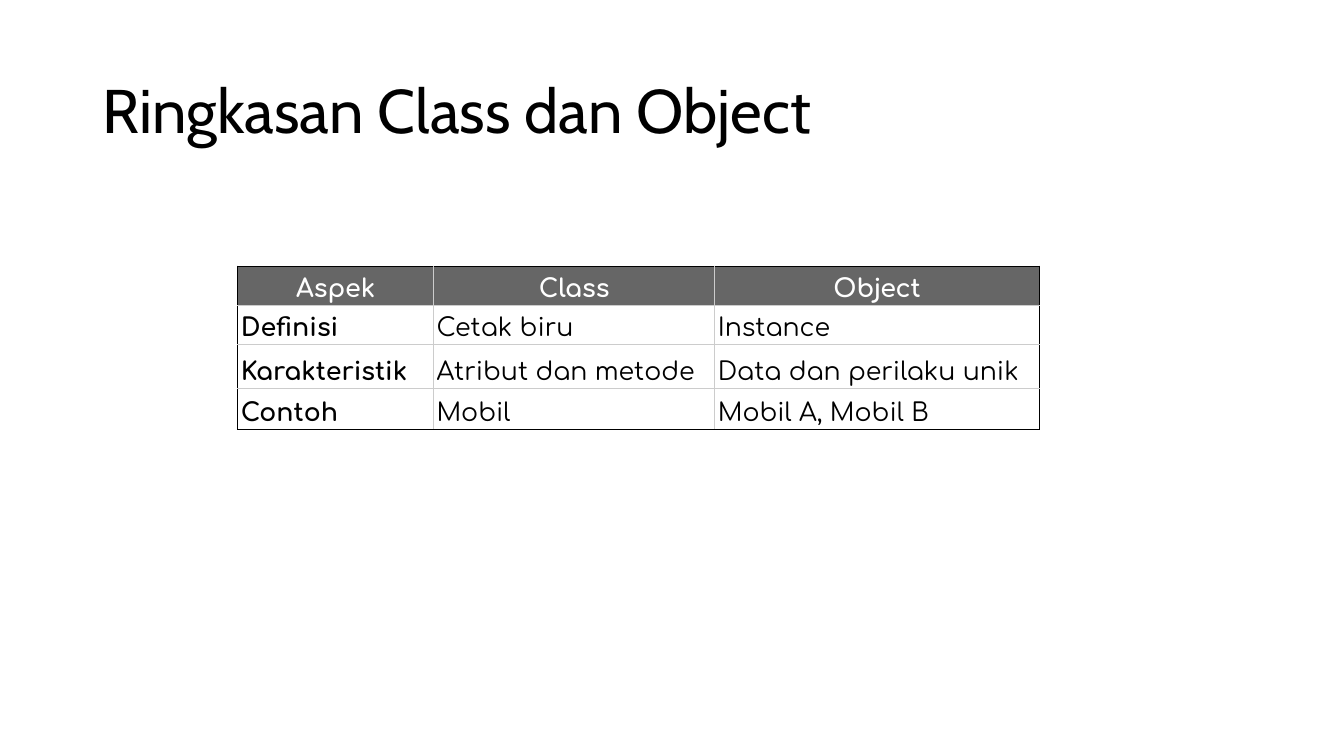
from lxml import etree
from pptx import Presentation
from pptx.dml.color import RGBColor
from pptx.enum.text import MSO_ANCHOR, PP_ALIGN
from pptx.oxml.ns import qn
from pptx.util import Pt

PX = 9144  # 100 px to the inch
MIDDLE, BOTTOM = MSO_ANCHOR.MIDDLE, MSO_ANCHOR.BOTTOM
LEFT, CENTER = PP_ALIGN.LEFT, PP_ALIGN.CENTER

BLACK, WHITE, DARK, PALE = "000000", "FFFFFF", "666666", "CCCCCC"
COLS = [194, 279, 322]
ROWS = [39, 39, 43, 41]
CELLS = [
    ["Aspek", "Class", "Object"],
    ["Definisi", "Cetak biru", "Instance"],
    ["Karakteristik", "Atribut dan metode", "Data dan perilaku unik"],
    ["Contoh", "Mobil", "Mobil A, Mobil B"],
]


def px(n):
    return n * PX


def rgb(code):
    return RGBColor.from_string(code)


class Deck:
    head_font, body_font = "Cabin", "Comfortaa"
    head_size, body_size = 44, 18
    line = 0.75

    def __init__(self, width, height):
        self.file = Presentation()
        self.file.slide_width, self.file.slide_height = px(width), px(height)
        self.slide = self.file.slides.add_slide(self.file.slide_layouts[6])

    def text(self, para, words, font, size, color, bold=False):
        run = para.add_run()
        run.text = words
        run.font.name, run.font.size = font, Pt(size)
        run.font.bold = bold
        run.font.color.rgb = rgb(color)

    def title(self, words, *box):
        frame = self.slide.shapes.add_textbox(*map(px, box)).text_frame
        frame.word_wrap = True
        frame.vertical_anchor = MIDDLE
        para = frame.paragraphs[0]
        para.line_spacing = 0.9
        self.text(para, words, self.head_font, self.head_size, BLACK)

    def border(self, cell, colors):
        """Draw the cell's edges; colors run left, right, top, bottom."""
        props = cell._tc.get_or_add_tcPr()
        for i, (side, color) in enumerate(zip("LRTB", colors)):
            edge = etree.Element(qn(f"a:ln{side}"), w=str(Pt(self.line)))
            fill = etree.SubElement(edge, qn("a:solidFill"))
            etree.SubElement(fill, qn("a:srgbClr"), val=color)
            props.insert(i, edge)

    def cell(self, cell, words, head, bold):
        cell.margin_left = cell.margin_right = px(3)
        cell.margin_top = cell.margin_bottom = px(2)
        cell.vertical_anchor = BOTTOM
        if head:
            cell.fill.solid()
            cell.fill.fore_color.rgb = rgb(DARK)
        else:
            cell.fill.background()
        para = cell.text_frame.paragraphs[0]
        para.alignment = CENTER if head else LEFT
        self.text(para, words, self.body_font, self.body_size,
                  WHITE if head else BLACK, bold)

    def table(self, x, y, cols, rows, cells):
        """Fill a table with a dark outline, pale inner lines and a head row."""
        box = map(px, (x, y, sum(cols), sum(rows)))
        grid = self.slide.shapes.add_table(len(rows), len(cols), *box).table
        grid.first_row = grid.horz_banding = False
        for col, width in zip(grid.columns, cols):
            col.width = px(width)
        for row, height in zip(grid.rows, rows):
            row.height = px(height)
        for r, line in enumerate(cells):
            for c, words in enumerate(line):
                cell = grid.cell(r, c)
                self.cell(cell, words, r == 0, r == 0 or c == 0)
                outer = (c == 0, c == len(cols) - 1, r == 0, r == len(rows) - 1)
                self.border(cell, [BLACK if out else PALE for out in outer])


def main():
    deck = Deck(1333, 750)
    deck.title("Ringkasan Class dan Object", 92, 40, 1150, 145)
    deck.table(236, 264, COLS, ROWS, CELLS)
    deck.file.save("out.pptx")


if __name__ == "__main__":
    main()
